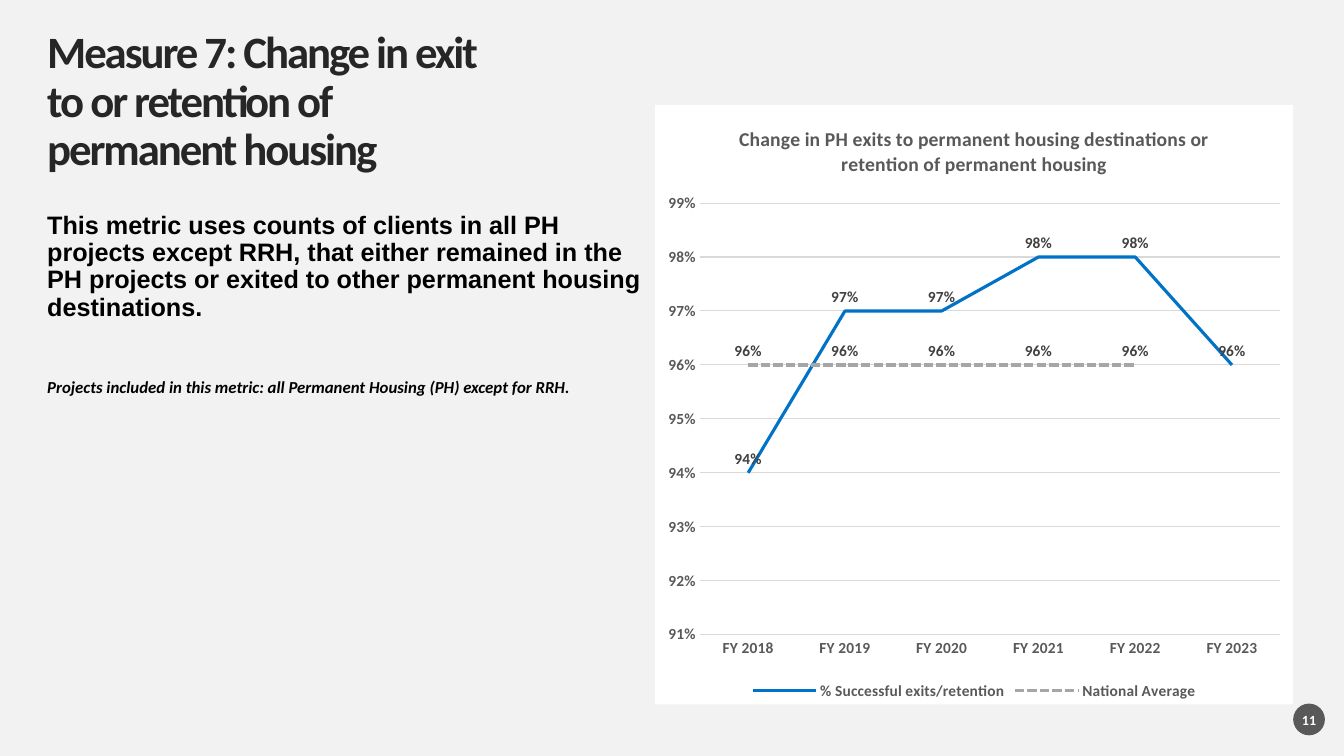
import pptx
import pptx.chart.data
import pptx.dml.color
import pptx.enum.chart
import pptx.enum.dml
import pptx.enum.shapes
import pptx.enum.text
import pptx.oxml
import pptx.util
from pptx.util import Cm, Pt


class Theme:
    back = "F2F2F2"
    white = "FFFFFF"
    black = "000000"
    head = "262626"
    gray = "595959"
    label = "404040"
    grid = "D9D9D9"
    blue = "0072C7"
    mean = "A6A6A6"
    font = "Calibri"
    body = "Arial"
    size = {"head": 32, "lead": 18, "note": 12, "page": 10, "title": 14, "axis": 11}


def rgb(code):
    return pptx.dml.color.RGBColor.from_string(code)


def style(font, size, color, name=Theme.font, bold=True):
    font.name = name
    font.size = Pt(Theme.size[size])
    font.bold = bold
    font.color.rgb = rgb(color)


Anchor = pptx.enum.text.MSO_ANCHOR
Align = pptx.enum.text.PP_ALIGN
Place = pptx.enum.chart

deck = pptx.Presentation()
deck.slide_width = Cm(33.87)
deck.slide_height = Cm(19.05)
slide = deck.slides.add_slide(deck.slide_layouts[5])
slide.background.fill.solid()
slide.background.fill.fore_color.rgb = rgb(Theme.back)

# Title, text box and page badge
title = slide.shapes.title
title.left, title.top, title.width, title.height = Cm(1.19), Cm(0.73), Cm(11.35), Cm(3.72)
body = slide.shapes.add_textbox(Cm(1.19), Cm(5.36), Cm(15.29), Cm(11.84))
badge = slide.shapes.add_shape(
    pptx.enum.shapes.MSO_SHAPE.OVAL, Cm(32.59), Cm(17.73), Cm(0.8), Cm(0.8))
badge.shadow.inherit = False
badge.fill.solid()
badge.fill.fore_color.rgb = rgb(Theme.gray)
badge.line.fill.background()

for shape, anchor in (
        (title, Anchor.MIDDLE), (body, Anchor.TOP), (badge, Anchor.MIDDLE)):
    frame = shape.text_frame
    frame.auto_size = pptx.enum.text.MSO_AUTO_SIZE.NONE
    frame.word_wrap = True
    frame.vertical_anchor = anchor
    frame.margin_left = frame.margin_right = frame.margin_top = frame.margin_bottom = 0

# Title words
para = title.text_frame.paragraphs[0]
para.alignment = Align.LEFT
para.line_spacing = 0.9
run = para.add_run()
run.text = "Measure 7: Change in exit to or retention of permanent housing"
style(run.font, "head", Theme.head)
run._r.get_or_add_rPr().set("spc", "-150")

# Description
para = body.text_frame.paragraphs[0]
para.line_spacing = 0.9
run = para.add_run()
run.text = ("This metric uses counts of clients in all PH projects except RRH, that either "
            "remained in the PH projects or exited to other permanent housing destinations.")
style(run.font, "lead", Theme.black, Theme.body)

para = body.text_frame.add_paragraph()
para.line_spacing = 1.4
para.space_before = Pt(34)
run = para.add_run()
run.text = "Projects included in this metric: all Permanent Housing (PH) except for RRH."
style(run.font, "note", Theme.black)
run.font.italic = True

# Page number
para = badge.text_frame.paragraphs[0]
para.alignment = Align.CENTER
run = para.add_run()
run.text = "11"
style(run.font, "page", Theme.white)

# Chart
data = pptx.chart.data.CategoryChartData(number_format="0%")
data.categories = [f"FY {year}" for year in range(2018, 2024)]
data.add_series("% Successful exits/retention", [0.94, 0.97, 0.97, 0.98, 0.98, 0.96])
data.add_series("National Average", [0.96] * 5 + [None])
chart = slide.shapes.add_chart(
    Place.XL_CHART_TYPE.LINE, Cm(16.51), Cm(2.64), Cm(16.08), Cm(15.11), data).chart
style(chart.font, "axis", Theme.gray)

# Chart title and legend
chart.has_title = True
run = chart.chart_title.text_frame.paragraphs[0].add_run()
run.text = ("Change in PH exits to permanent housing destinations "
            "or retention of permanent housing")
style(run.font, "title", Theme.gray)
chart.chart_title.include_in_layout = False
chart.has_legend = True
chart.legend.position = Place.XL_LEGEND_POSITION.BOTTOM
chart.legend.include_in_layout = False
style(chart.legend.font, "axis", Theme.gray)

# Axes
cats, vals = chart.category_axis, chart.value_axis
for axis in (cats, vals):
    axis.major_tick_mark = axis.minor_tick_mark = Place.XL_TICK_MARK.NONE
    style(axis.tick_labels.font, "axis", Theme.gray)
vals.minimum_scale, vals.maximum_scale, vals.major_unit = 0.91, 0.99, 0.01
vals.tick_labels.number_format = "0%"
vals.tick_labels.number_format_is_linked = False
vals.format.line.fill.background()
vals.has_major_gridlines = True
for line in (cats.format.line, vals.major_gridlines.format.line):
    line.color.rgb = rgb(Theme.grid)
    line.width = Pt(0.75)

# Series lines and labels
for series, color in zip(chart.plots[0].series, (Theme.blue, Theme.mean)):
    series.smooth = False
    series.marker.style = Place.XL_MARKER_STYLE.NONE
    series.format.line.color.rgb = rgb(color)
    series.format.line.width = Pt(2.25)
    labels = series.data_labels
    labels.show_value = True
    labels.position = Place.XL_LABEL_POSITION.ABOVE
    labels.number_format = "0%"
    labels.number_format_is_linked = False
    style(labels.font, "axis", Theme.label)
series.format.line.dash_style = pptx.enum.dml.MSO_LINE.SQUARE_DOT

# White chart area and fixed plot area
space = chart._chartSpace
names = ('xmlns:c="http://schemas.openxmlformats.org/drawingml/2006/chart" '
         'xmlns:a="http://schemas.openxmlformats.org/drawingml/2006/main"')
space.chart.addnext(pptx.oxml.parse_xml(
    f'<c:spPr {names}><a:solidFill><a:srgbClr val="{Theme.white}"/></a:solidFill>'
    '<a:ln><a:noFill/></a:ln></c:spPr>'))
area = space.chart.plotArea
for old in area.xpath("c:layout"):
    area.remove(old)
edges = "".join(f'<c:{key} val="{val}"/>' for key, val in (
    ("layoutTarget", "inner"), ("xMode", "edge"), ("yMode", "edge"),
    ("x", 0.07), ("y", 0.164), ("w", 0.91), ("h", 0.72)))
area.insert(0, pptx.oxml.parse_xml(
    f'<c:layout {names}><c:manualLayout>{edges}</c:manualLayout></c:layout>'))

deck.save("out.pptx")
